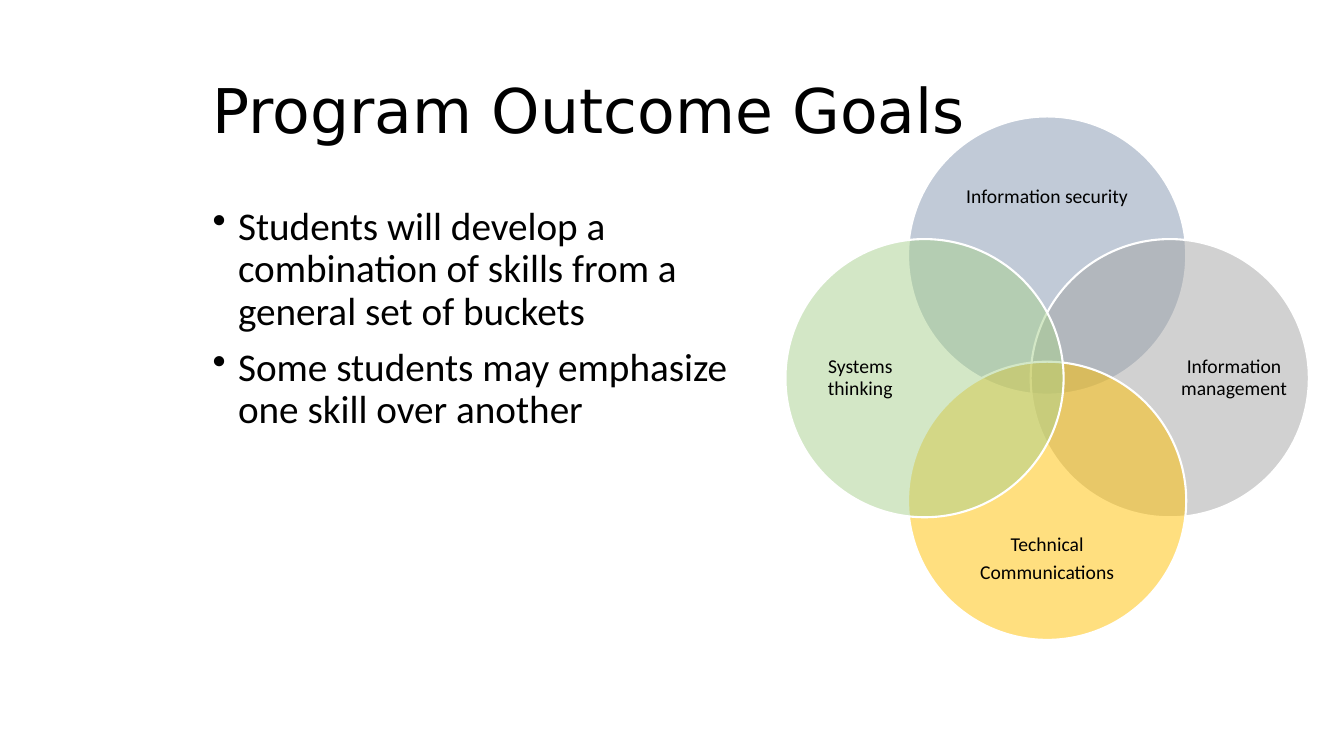
from dataclasses import dataclass

from lxml.etree import SubElement
from pptx import Presentation
from pptx.dml.color import RGBColor
from pptx.enum.shapes import MSO_SHAPE as Preset
from pptx.enum.text import MSO_ANCHOR as Anchor, PP_ALIGN as Align
from pptx.oxml.ns import qn
from pptx.util import Cm, Pt


@dataclass(frozen=True)
class Theme:
    """Colours, fonts and type sizes of the slide."""
    ink: str = "000000"
    outline: str = "FFFFFF"
    security: str = "8497B0"
    management: str = "A5A5A5"
    communications: str = "FFC000"
    systems: str = "A9D18E"
    title_font: str = "DejaVu Sans"
    body_font: str = "Calibri"
    title_size: int = 44
    body_size: int = 28
    label_size: int = 14


THEME = Theme()
CENTRE_X, CENTRE_Y = 26.39, 9.53
DIAMETER = 7.01
CIRCLE_REACH = 3.09
LABEL_WIDE, LABEL_NARROW = 5.38, 2.7


def add_bullet(para):
    """Give a paragraph a round bullet with a hanging indent."""
    properties = para._p.get_or_add_pPr()
    properties.set("marL", str(Cm(0.64)))
    properties.set("indent", str(-Cm(0.64)))
    SubElement(properties, qn("a:buChar")).set("char", "•")


def add_text(shapes, lines, left, top, width, height, *, size, font=THEME.body_font,
             align=Align.LEFT, anchor=Anchor.TOP, gap_before=0, gap_after=0,
             bullets=False, inset=True):
    """Add a wrapped text box with one paragraph for each line."""
    box = shapes.add_textbox(Cm(left), Cm(top), Cm(width), Cm(height))
    frame = box.text_frame
    frame.word_wrap = True
    frame.vertical_anchor = anchor
    if not inset:
        frame.margin_left = frame.margin_right = 0
        frame.margin_top = frame.margin_bottom = 0
    for index, line in enumerate(lines):
        para = frame.add_paragraph() if index else frame.paragraphs[0]
        if bullets:
            add_bullet(para)
        para.alignment = align
        para.line_spacing = 0.9
        para.space_before = Pt(gap_before if index else 0)
        para.space_after = Pt(gap_after)
        span = para.add_run()
        span.text = line
        span.font.name = font
        span.font.size = Pt(size)
        span.font.color.rgb = RGBColor.from_string(THEME.ink)


def add_circle(shapes, centre_x, centre_y, colour):
    """Add a half-transparent circle around a centre point."""
    circle = shapes.add_shape(
        Preset.OVAL, Cm(centre_x - DIAMETER / 2), Cm(centre_y - DIAMETER / 2),
        Cm(DIAMETER), Cm(DIAMETER))
    circle.shadow.inherit = False
    circle.fill.solid()
    circle.fill.fore_color.rgb = RGBColor.from_string(colour)
    fill_colour = circle.fill._xPr.find(qn("a:solidFill"))[0]
    SubElement(fill_colour, qn("a:alpha")).set("val", "50000")
    circle.line.color.rgb = RGBColor.from_string(THEME.outline)
    circle.line.width = Pt(1.5)


def add_venn(page, skills):
    """Add overlapping skill circles, each with a label near its outer edge."""
    shapes = page.shapes.add_group_shape().shapes
    for lines, colour, across, down in skills:
        add_circle(shapes, CENTRE_X + across * CIRCLE_REACH,
                   CENTRE_Y + down * CIRCLE_REACH, colour)
        if across:
            width, height, reach = LABEL_NARROW, LABEL_WIDE, 4.71
        else:
            width, height, reach = LABEL_WIDE, 2.21, 4.55
        add_text(shapes, lines,
                 CENTRE_X + across * reach - width / 2,
                 CENTRE_Y + down * reach - height / 2, width, height,
                 size=THEME.label_size, align=Align.CENTER, anchor=Anchor.MIDDLE,
                 gap_after=4.9, inset=False)


def main():
    """Build the slide and save the deck."""
    deck = Presentation()
    deck.slide_width, deck.slide_height = Cm(33.87), Cm(19.05)
    page = deck.slides.add_slide(deck.slide_layouts[6])
    add_text(page.shapes, ["Program Outcome Goals"], 5.11, 1.02, 28.02, 3.68,
             size=THEME.title_size, font=THEME.title_font, anchor=Anchor.MIDDLE)
    add_text(page.shapes,
             ["Students will develop a combination of skills from a general set of buckets",
              "Some students may emphasize one skill over another"],
             5.11, 5.08, 13.74, 12.09, size=THEME.body_size, gap_before=10, bullets=True)
    add_venn(page, [
        (["Information security"], THEME.security, 0, -1),
        (["Information management"], THEME.management, 1, 0),
        (["Technical", "Communications"], THEME.communications, 0, 1),
        (["Systems thinking"], THEME.systems, -1, 0),
    ])
    deck.save("out.pptx")


if __name__ == "__main__":
    main()
